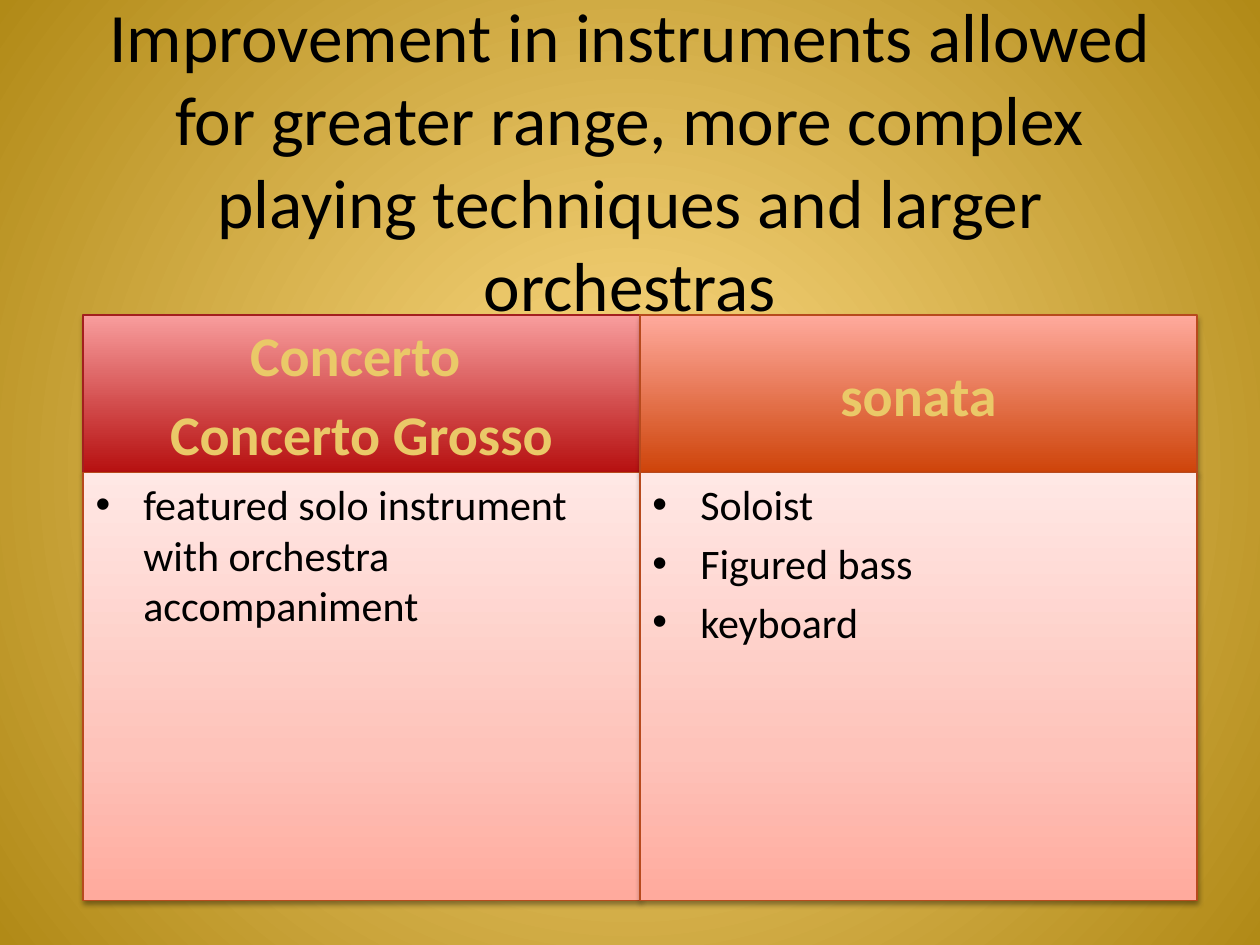
from lxml import etree
from pptx import Presentation
from pptx.dml.color import RGBColor
from pptx.enum.shapes import MSO_SHAPE
from pptx.enum.text import MSO_ANCHOR, MSO_AUTO_SIZE, PP_ALIGN
from pptx.oxml.ns import qn
from pptx.util import Inches, Pt

RECT = MSO_SHAPE.RECTANGLE
CENTER, LEFT = PP_ALIGN.CENTER, PP_ALIGN.LEFT
TOP, MIDDLE, BOTTOM = MSO_ANCHOR.TOP, MSO_ANCHOR.MIDDLE, MSO_ANCHOR.BOTTOM
NO_AUTOFIT = MSO_AUTO_SIZE.NONE

FONT = "Calibri"
COLORS = {"text": "000000", "heading": "EAC968", "red": "A31F1F", "rust": "B74A1D"}

# Gradient stops: percent along the gradient, colour
GRADIENTS = {
    "background": [(0, "FFDC87"), (100, "B18A17")],
    "red": [(0, "B61010"), (100, "F89D9D")],
    "orange": [(0, "CE440A"), (100, "FFAA9D")],
    "pink": [(0, "FFAA9D"), (35, "FEC3BA"), (100, "FFE8E5")],
}

# Grid of two columns with a heading row and a detail row
GRID_LEFT, GRID_TOP, COL_W = 0.66, 2.5, 4.42
HEAD_H, DETAIL_H = 1.25, 3.4

TITLE = ("Improvement in instruments allowed for greater range, more complex "
         "playing techniques and larger orchestras")
COLUMNS = [
    {"heading": ["Concerto ", "Concerto Grosso"], "anchor": BOTTOM,
     "gradient": "red", "line": "red",
     "points": ["featured solo instrument with orchestra accompaniment"]},
    {"heading": ["sonata"], "anchor": MIDDLE,
     "gradient": "orange", "line": "rust",
     "points": ["Soloist", "Figured bass", "keyboard"]},
]


def sub(parent, tag, **attrs):
    return etree.SubElement(parent, qn(tag), {k: str(v) for k, v in attrs.items()})


def set_gradient(fill, owner, name, circular=False):
    """Fill with named stops, rising from the bottom or out from the centre."""
    fill.gradient()
    grad = owner.find(".//" + qn("a:gradFill"))
    for child in list(grad):
        grad.remove(child)
    stops = sub(grad, "a:gsLst")
    for pos, color in GRADIENTS[name]:
        sub(sub(stops, "a:gs", pos=pos * 1000), "a:srgbClr", val=color)
    if circular:
        centre = sub(grad, "a:path", path="circle")
        sub(centre, "a:fillToRect", l=50000, t=50000, r=50000, b=50000)
    else:
        sub(grad, "a:lin", ang=270 * 60000, scaled=0)


def set_shadow(sp, opacity, distance):
    sp.shadow.inherit = False
    effects = sp.element.spPr.find(qn("a:effectLst"))
    shadow = sub(effects, "a:outerShdw", blurRad=Pt(3.1), dist=Pt(distance),
                 dir=90 * 60000, rotWithShape=0)
    sub(sub(shadow, "a:srgbClr", val="000000"), "a:alpha", val=opacity * 1000)


def add_run(p, text, size, color, bold=False):
    r = p.add_run()
    r.text = text
    r.font.name, r.font.size, r.font.bold = FONT, Pt(size), bold
    r.font.color.rgb = RGBColor.from_string(COLORS[color])


def set_bullet(p):
    pPr = p._p.get_or_add_pPr()
    pPr.set("marL", str(Inches(0.38)))
    pPr.set("indent", str(-Inches(0.38)))
    sub(pPr, "a:buFont", typeface="Arial")
    sub(pPr, "a:buChar", char="•")


def add_panel(slide, col, top, height, gradient, line, shadow):
    sp = slide.shapes.add_shape(RECT, Inches(GRID_LEFT + col * COL_W), Inches(top),
                                Inches(COL_W), Inches(height))
    set_gradient(sp.fill, sp.element.spPr, gradient)
    sp.line.color.rgb = RGBColor.from_string(COLORS[line])
    sp.line.width = Pt(0.75)
    set_shadow(sp, *shadow)
    return sp


def add_text(sp, lines, size, color, anchor, align, bold=False, bullets=False):
    tf = sp.text_frame
    tf.word_wrap, tf.vertical_anchor = True, anchor
    for i, text in enumerate(lines):
        p = tf.add_paragraph() if i else tf.paragraphs[0]
        p.alignment = align
        p.space_before = Pt(0.2 * size)
        if bullets:
            set_bullet(p)
        add_run(p, text, size, color, bold)


def add_title(slide):
    title = slide.shapes.title
    title.left, title.top = Inches(0.5), Inches(0.3)
    title.width, title.height = Inches(9), Inches(2.53)
    tf = title.text_frame
    tf.word_wrap, tf.auto_size, tf.vertical_anchor = True, NO_AUTOFIT, MIDDLE
    tf.margin_bottom = Inches(0.65)  # lifts the text clear of the grid
    p = tf.paragraphs[0]
    p.alignment = CENTER
    add_run(p, TITLE, 39.6, "text")


def add_column(slide, col, content):
    head = add_panel(slide, col, GRID_TOP, HEAD_H, content["gradient"],
                     content["line"], (35, 1.8))
    add_text(head, content["heading"], 32, "heading", content["anchor"], CENTER, bold=True)
    detail = add_panel(slide, col, GRID_TOP + HEAD_H, DETAIL_H, "pink", "rust", (38, 1.6))
    add_text(detail, content["points"], 24, "text", TOP, LEFT, bullets=True)


def main():
    prs = Presentation()
    prs.slide_width, prs.slide_height = Inches(10), Inches(7.5)
    slide = prs.slides.add_slide(prs.slide_layouts[5])
    set_gradient(slide.background.fill, slide.element, "background", circular=True)
    add_title(slide)
    for col, content in enumerate(COLUMNS):
        add_column(slide, col, content)
    prs.save("out.pptx")


if __name__ == "__main__":
    main()
